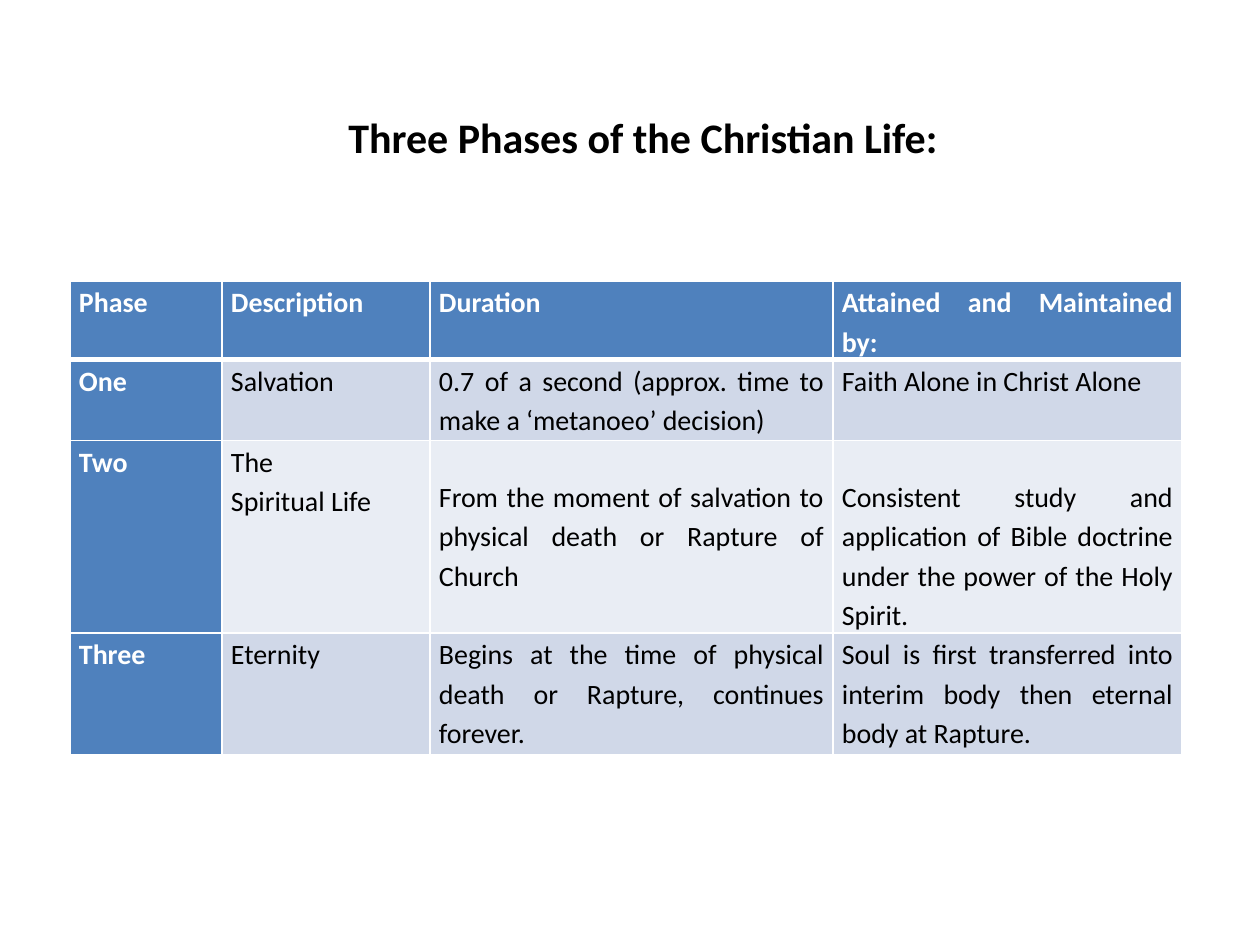
from dataclasses import dataclass

from lxml.etree import SubElement
from pptx import Presentation
from pptx.dml.color import RGBColor
from pptx.enum.text import MSO_AUTO_SIZE as AutoSize, PP_ALIGN as Align
from pptx.oxml.ns import qn
from pptx.util import Pt

EMU_PER_PX = 914400 / 126
FONT = "Calibri"
BLUE = RGBColor(0x4F, 0x81, 0xBD)
BAND_DARK = RGBColor(0xD0, 0xD8, 0xE8)
BAND_LIGHT = RGBColor(0xE9, 0xED, 0xF4)
WHITE = RGBColor(0xFF, 0xFF, 0xFF)
BLACK = RGBColor(0x00, 0x00, 0x00)


@dataclass(frozen=True)
class PhaseRow:
    height: int
    texts: tuple[str, str, str, str]
    detail_drop: int = 0


TITLE = "Three Phases of the Christian Life:"
COLUMN_WIDTHS = (152, 208, 403, 349)
ROWS = (
    PhaseRow(78, ("Phase", "Description", "Duration", "Attained and Maintained by:")),
    PhaseRow(81, (
        "One",
        "Salvation",
        "0.7 of a second (approx. time to make a ‘metanoeo’ decision)",
        "Faith Alone in Christ Alone",
    )),
    PhaseRow(191, (
        "Two",
        "The\nSpiritual Life",
        "From the moment of salvation to physical death or Rapture of Church",
        "Consistent study and application of Bible doctrine under the power of the Holy Spirit.",
    ), detail_drop=35),
    PhaseRow(122, (
        "Three",
        "Eternity",
        "Begins at the time of physical death or Rapture, continues forever.",
        "Soul is first transferred into interim body then eternal body at Rapture.",
    )),
)


def px(length: int) -> int:
    return round(length * EMU_PER_PX)


def format_runs(paragraph, size: int, color: RGBColor, bold: bool) -> None:
    for run in paragraph.runs:
        run.font.name = FONT
        run.font.size = Pt(size)
        run.font.bold = bold
        run.font.color.rgb = color


def set_borders(cell, top: int, bottom: int) -> None:
    properties = cell._tc.get_or_add_tcPr()
    for side, width in (("L", 1), ("R", 1), ("T", top), ("B", bottom)):
        line = SubElement(properties, qn(f"a:ln{side}"), w=str(Pt(width)))
        fill = SubElement(line, qn("a:solidFill"))
        SubElement(fill, qn("a:srgbClr"), val=str(WHITE))


def fill_cell(cell, row: int, column: int) -> None:
    phase = ROWS[row]
    heading = row == 0 or column == 0
    band = BAND_DARK if row % 2 else BAND_LIGHT
    set_borders(cell, top=3 if row == 1 else 1, bottom=3 if row == 0 else 1)
    cell.fill.solid()
    cell.fill.fore_color.rgb = BLUE if heading else band
    cell.margin_left = cell.margin_right = px(9)
    cell.margin_top = px(phase.detail_drop if column >= 2 else 0)
    cell.margin_bottom = 0
    cell.text_frame.text = phase.texts[column]
    for paragraph in cell.text_frame.paragraphs:
        paragraph.alignment = Align.JUSTIFY
        paragraph.line_spacing = 1.15
        format_runs(paragraph, 16, WHITE if heading else BLACK, heading)


def add_phase_table(slide, left: int, top: int) -> None:
    width = sum(COLUMN_WIDTHS)
    height = sum(row.height for row in ROWS)
    table = slide.shapes.add_table(
        len(ROWS), len(COLUMN_WIDTHS), px(left), px(top), px(width), px(height)
    ).table
    table.first_col = True
    for column, column_width in enumerate(COLUMN_WIDTHS):
        table.columns[column].width = px(column_width)
    for row, phase in enumerate(ROWS):
        table.rows[row].height = px(phase.height)
        for column in range(len(COLUMN_WIDTHS)):
            fill_cell(table.cell(row, column), row, column)


def add_title(slide, left: int, top: int, width: int, height: int) -> None:
    text_frame = slide.shapes.add_textbox(px(left), px(top), px(width), px(height)).text_frame
    text_frame.word_wrap = True
    text_frame.auto_size = AutoSize.SHAPE_TO_FIT_TEXT
    text_frame.text = TITLE
    format_runs(text_frame.paragraphs[0], 24, BLACK, True)


def main() -> None:
    presentation = Presentation()
    presentation.slide_width = px(1260)
    presentation.slide_height = px(945)
    slide = presentation.slides.add_slide(presentation.slide_layouts[6])
    add_phase_table(slide, 70, 281)
    add_title(slide, 336, 105, 683, 63)
    presentation.save("out.pptx")


if __name__ == "__main__":
    main()
